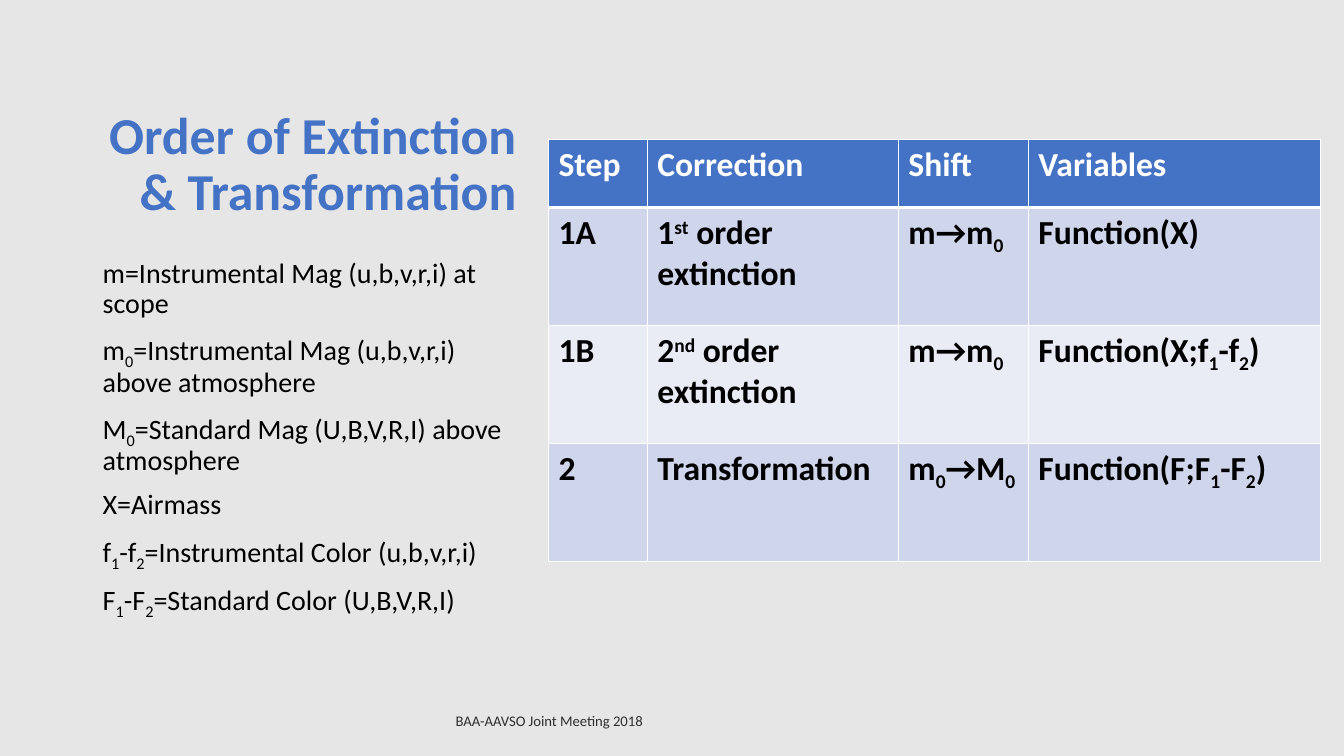
from lxml.etree import SubElement
from pptx import Presentation
from pptx.dml.color import RGBColor
from pptx.enum.text import MSO_ANCHOR as Anchor, PP_ALIGN as Align
from pptx.oxml.ns import qn
from pptx.util import Inches, Pt

COLORS = {
    "background": "E7E6E6",
    "accent": "4472C4",
    "text": "000000",
    "white": "FFFFFF",
    "odd_row": "CFD5EA",
    "even_row": "E9EBF5",
}
BASELINES = {"^": "30000", "_": "-25000"}

TITLE = "Order of Extinction & Transformation"
DEFINITIONS = [
    "m=Instrumental Mag (u,b,v,r,i) at scope",
    "m|_0|=Instrumental Mag (u,b,v,r,i) above atmosphere",
    "M|_0|=Standard Mag (U,B,V,R,I) above atmosphere",
    "X=Airmass",
    "f|_1|-f|_2|=Instrumental Color (u,b,v,r,i)",
    "F|_1|-F|_2|=Standard Color (U,B,V,R,I)",
]
STEPS = [
    ["Step", "Correction", "Shift", "Variables"],
    ["1A", "1|^st| order extinction", "m→m|_0", "Function(X)"],
    ["1B", "2|^nd| order extinction", "m→m|_0", "Function(X;f|_1|-f|_2|)"],
    ["2", "Transformation", "m|_0|→M|_0", "Function(F;F|_1|-F|_2|)"],
]
COLUMN_WIDTHS = [0.98, 2.49, 1.29, 2.9]
ROW_HEIGHTS = [0.68, 1.17, 1.17, 1.17]
FOOTER = "BAA-AAVSO Joint Meeting 2018"


def rgb(name):
    return RGBColor.from_string(COLORS[name])


def write_marked(paragraph, marked, size, color, bold=False):
    for part in filter(None, marked.split("|")):
        run = paragraph.add_run()
        run.text = part.lstrip("^_")
        formats = {"name": "Calibri", "size": Pt(size), "bold": bold}
        for key, value in formats.items():
            setattr(run.font, key, value)
        run.font.color.rgb = rgb(color)
        if part[0] in BASELINES:
            run.font._element.set("baseline", BASELINES[part[0]])


def add_text(slide, place, lines, size, color, bold=False,
             anchor=Anchor.TOP, **spacing):
    frame = slide.shapes.add_textbox(*map(Inches, place)).text_frame
    frame.word_wrap = True
    frame.vertical_anchor = anchor
    for index, line in enumerate(lines):
        paragraph = frame.add_paragraph() if index else frame.paragraphs[0]
        for key, value in spacing.items():
            setattr(paragraph, key, value)
        write_marked(paragraph, line, size, color, bold)
    return frame


def set_border(cell, side, width):
    border = SubElement(cell._tc.get_or_add_tcPr(), qn(f"a:ln{side}"),
                        w=str(Pt(width)))
    fill = SubElement(border, qn("a:solidFill"))
    SubElement(fill, qn("a:srgbClr"), val=COLORS["white"])


def style_cell(cell, row):
    widths = {"L": 1, "R": 1, "T": 3 if row == 1 else 1,
              "B": 3 if row == 0 else 1}
    for side, width in widths.items():
        set_border(cell, side, width)
    cell.fill.solid()
    band = "odd_row" if row % 2 else "even_row"
    cell.fill.fore_color.rgb = rgb(band if row else "accent")


def add_steps_table(slide):
    table = slide.shapes.add_table(
        len(STEPS), len(COLUMN_WIDTHS), Inches(5.44), Inches(1.38),
        Inches(sum(COLUMN_WIDTHS)), Inches(sum(ROW_HEIGHTS))).table
    for column, width in zip(table.columns, COLUMN_WIDTHS):
        column.width = Inches(width)
    for row, height in zip(table.rows, ROW_HEIGHTS):
        row.height = Inches(height)
    for row, entries in enumerate(STEPS):
        for column, entry in enumerate(entries):
            cell = table.cell(row, column)
            style_cell(cell, row)
            write_marked(cell.text_frame.paragraphs[0], entry, 24,
                         "text" if row else "white", bold=True)


def add_footer(slide):
    frame = add_text(slide, (4.42, 6.95, 4.5, 0.4), [FOOTER], 10.5, "text",
                     anchor=Anchor.MIDDLE, space_after=Pt(6))
    for color in frame._txBody.iter(qn("a:srgbClr")):
        SubElement(color, qn("a:alpha"), val="80000")


def main():
    deck = Presentation()
    deck.slide_width, deck.slide_height = Inches(13.33), Inches(7.5)
    slide = deck.slides.add_slide(deck.slide_layouts[6])
    slide.background.fill.solid()
    slide.background.fill.fore_color.rgb = rgb("background")
    add_text(slide, (0.92, 0.5, 4.3, 1.75), [TITLE], 37, "accent", bold=True,
             anchor=Anchor.BOTTOM, alignment=Align.RIGHT, line_spacing=0.9)
    add_steps_table(slide)
    add_text(slide, (0.92, 2.52, 4.3, 4.17), DEFINITIONS, 20, "text",
             line_spacing=0.9, space_before=Pt(10))
    add_footer(slide)
    deck.save("out.pptx")


if __name__ == "__main__":
    main()
